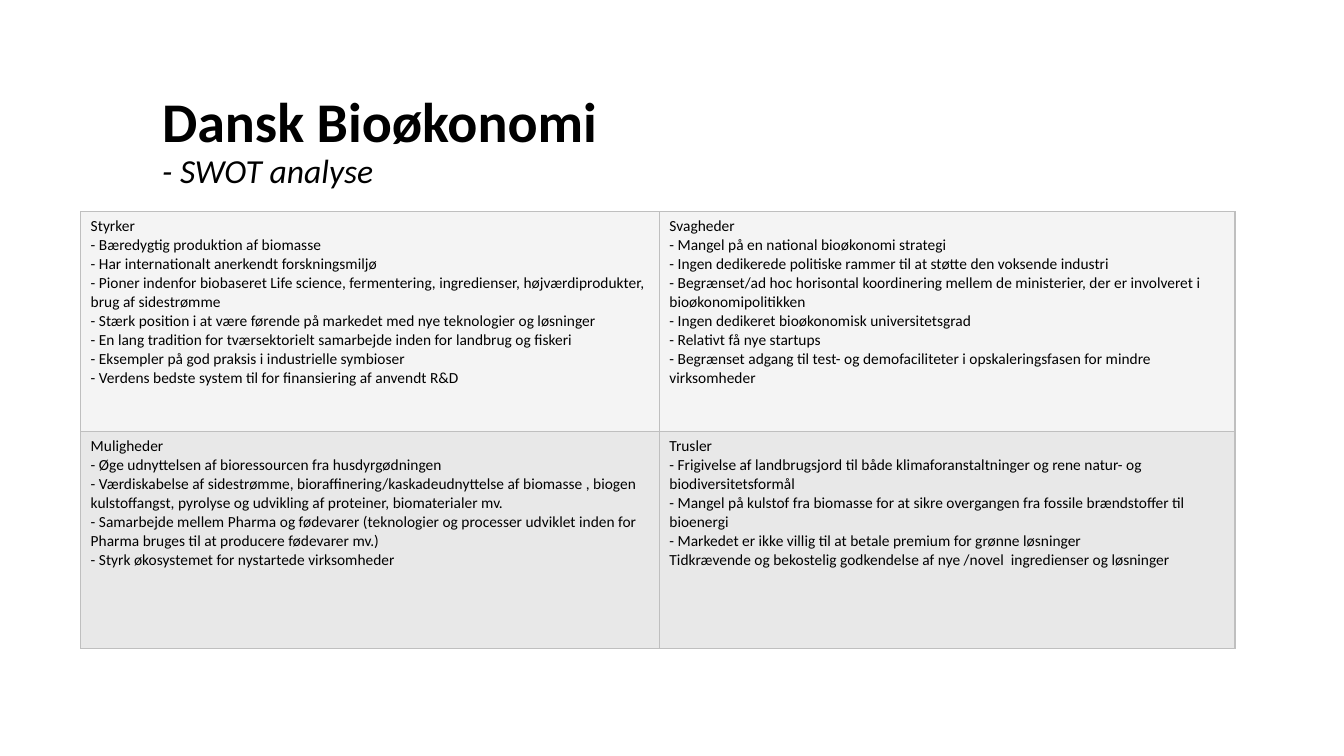
from dataclasses import dataclass

from lxml import etree
from pptx import Presentation
from pptx import util as u
from pptx.dml.color import RGBColor
from pptx.enum import text
from pptx.oxml import ns

SLIDE_W, SLIDE_H = u.Inches(13.33), u.Inches(7.5)


@dataclass(frozen=True)
class Theme:
    font: str = "Calibri"
    ink: str = "000000"
    border: str = "BFBFBF"
    row_fills: tuple = ("F4F4F4", "E8E8E8")
    title_size: int = 40
    subtitle_size: int = 24
    body_size: int = 11
    border_width: int = 1


THEME = Theme()

STRENGTHS = [
    "Styrker",
    "- Bæredygtig produktion af biomasse",
    "- Har internationalt anerkendt forskningsmiljø",
    "- Pioner indenfor biobaseret Life science, fermentering, ingredienser, højværdiprodukter, brug af sidestrømme",
    "- Stærk position i at være førende på markedet med nye teknologier og løsninger",
    "- En lang tradition for tværsektorielt samarbejde inden for landbrug og fiskeri",
    "- Eksempler på god praksis i industrielle symbioser",
    "- Verdens bedste system til for finansiering af anvendt R&D",
]
WEAKNESSES = [
    "Svagheder",
    "- Mangel på en national bioøkonomi strategi",
    "- Ingen dedikerede politiske rammer til at støtte den voksende industri",
    "- Begrænset/ad hoc horisontal koordinering mellem de ministerier, der er involveret i bioøkonomipolitikken",
    "- Ingen dedikeret bioøkonomisk universitetsgrad",
    "- Relativt få nye startups",
    "- Begrænset adgang til test- og demofaciliteter i opskaleringsfasen for mindre virksomheder",
]
OPPORTUNITIES = [
    "Muligheder",
    "- Øge udnyttelsen af bioressourcen fra husdyrgødningen",
    "- Værdiskabelse af sidestrømme, bioraffinering/kaskadeudnyttelse af biomasse , biogen kulstoffangst, pyrolyse og udvikling af proteiner, biomaterialer mv.",
    "- Samarbejde mellem Pharma og fødevarer (teknologier og processer udviklet inden for Pharma bruges til at producere fødevarer mv.)",
    "- Styrk økosystemet for nystartede virksomheder",
]
THREATS = [
    "Trusler",
    "- Frigivelse af landbrugsjord til både klimaforanstaltninger og rene natur- og biodiversitetsformål",
    "- Mangel på kulstof fra biomasse for at sikre overgangen fra fossile brændstoffer til bioenergi",
    "- Markedet er ikke villig til at betale premium for grønne løsninger",
    "Tidkrævende og bekostelig godkendelse af nye /novel  ingredienser og løsninger",
]
SWOT = [[STRENGTHS, WEAKNESSES], [OPPORTUNITIES, THREATS]]
COLUMN_WIDTHS = [u.Inches(5.74), u.Inches(5.71)]
ROW_HEIGHTS = [u.Inches(2.18), u.Inches(2.15)]


def style(run, size, bold=False, italic=False):
    run.font.name = THEME.font
    run.font.size = u.Pt(size)
    run.font.bold = bold
    run.font.italic = italic
    run.font.color.rgb = RGBColor.from_string(THEME.ink)


def add_heading(slide, title, subtitle):
    heading = slide.shapes.add_textbox(
        u.Inches(1.51), u.Inches(0.79), u.Inches(11.5), u.Inches(1.25)
    ).text_frame
    heading.word_wrap = True
    heading.vertical_anchor = text.MSO_ANCHOR.MIDDLE
    heading.text = f"{title}\v{subtitle}"
    lines = heading.paragraphs[0]
    lines.line_spacing = 0.9
    style(lines.runs[0], THEME.title_size, bold=True)
    style(lines.runs[1], THEME.subtitle_size, italic=True)


def add_borders(cell):
    properties = cell._tc.get_or_add_tcPr()
    for side in ("a:lnL", "a:lnR", "a:lnT", "a:lnB"):
        edge = etree.SubElement(
            properties, ns.qn(side), w=str(u.Pt(THEME.border_width))
        )
        paint = etree.SubElement(edge, ns.qn("a:solidFill"))
        etree.SubElement(paint, ns.qn("a:srgbClr"), val=THEME.border)


def fill_quadrant(cell, points, color):
    add_borders(cell)
    cell.fill.solid()
    cell.fill.fore_color.rgb = RGBColor.from_string(color)
    cell.text_frame.text = "\n".join(points)
    for point in cell.text_frame.paragraphs:
        for run in point.runs:
            style(run, THEME.body_size)


def add_swot(slide):
    swot = slide.shapes.add_table(
        len(ROW_HEIGHTS), len(COLUMN_WIDTHS), u.Inches(0.8), u.Inches(2.1),
        sum(COLUMN_WIDTHS), sum(ROW_HEIGHTS),
    ).table
    swot.first_row = swot.horz_banding = False
    for column, width in zip(swot.columns, COLUMN_WIDTHS):
        column.width = width
    for row, height, quadrants, color in zip(
        swot.rows, ROW_HEIGHTS, SWOT, THEME.row_fills
    ):
        row.height = height
        for cell, points in zip(row.cells, quadrants):
            fill_quadrant(cell, points, color)


def main():
    deck = Presentation()
    deck.slide_width, deck.slide_height = SLIDE_W, SLIDE_H
    slide = deck.slides.add_slide(deck.slide_layouts[6])
    add_heading(slide, "Dansk Bioøkonomi", "- SWOT analyse")
    add_swot(slide)
    deck.save("out.pptx")


if __name__ == "__main__":
    main()
